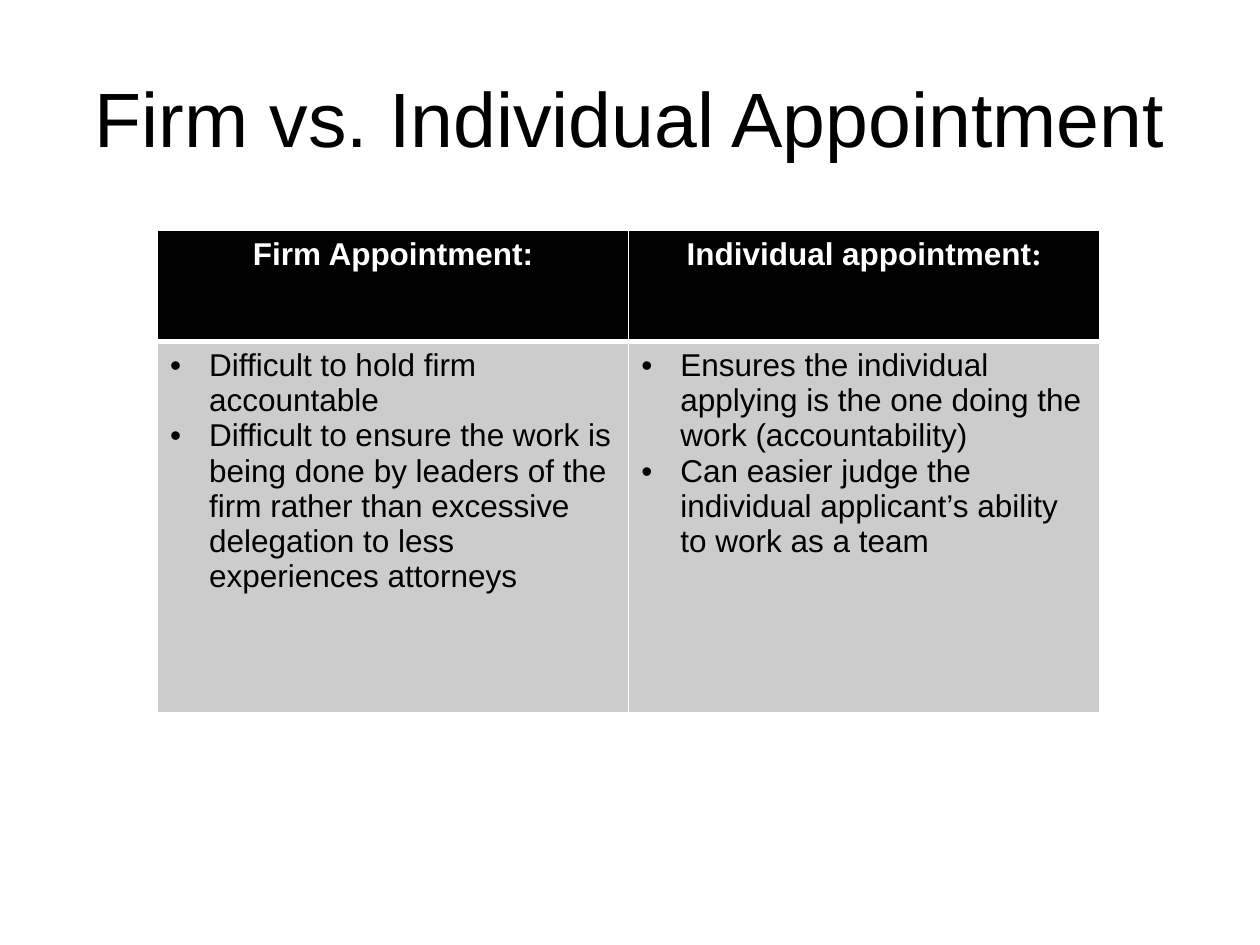
import pptx
import pptx.util
import pptx.dml.color
import pptx.enum.text
import pptx.oxml.ns
import lxml.etree

Inches = pptx.util.Inches
ALIGN = pptx.enum.text.PP_ALIGN
COLORS = {"ink": "000000", "paper": "FFFFFF", "body": "CCCCCC"}
TITLE_FORMAT = {"name": "Arial", "size": pptx.util.Pt(44), "bold": False}
HEADING_FORMAT = {"name": "Arial", "size": pptx.util.Pt(18), "bold": True}
COLON_FORMAT = {**HEADING_FORMAT, "name": "Times New Roman"}
POINT_FORMAT = {**HEADING_FORMAT, "bold": False}

APPOINTMENTS = [
    ([("Firm Appointment:", HEADING_FORMAT)],
     ["Difficult to hold firm accountable",
      "Difficult to ensure the work is being done by leaders of the firm "
      "rather than excessive delegation to less experiences attorneys"]),
    ([("Individual appointment", HEADING_FORMAT), (":", COLON_FORMAT)],
     ["Ensures the individual applying is the one doing the work (accountability)",
      "Can easier judge the individual applicant’s ability to work as a team"]),
]


def rgb(color):
    return pptx.dml.color.RGBColor.from_string(COLORS[color])


def add_words(paragraph, words, font_format, color):
    run = paragraph.add_run()
    run.text = words
    for attribute, value in font_format.items():
        setattr(run.font, attribute, value)
    run.font.color.rgb = rgb(color)


def add_part(parent, tag, **attributes):
    return lxml.etree.SubElement(parent, pptx.oxml.ns.qn(tag), attributes)


def style_cell(cell, fill, top, bottom):
    properties = cell._tc.get_or_add_tcPr()
    for side, points in {"L": 1, "R": 1, "T": top, "B": bottom}.items():
        border = add_part(properties, f"a:ln{side}", w=str(pptx.util.Pt(points)))
        add_part(add_part(border, "a:solidFill"), "a:srgbClr", val=COLORS["paper"])
    cell.fill.solid()
    cell.fill.fore_color.rgb = rgb(fill)


def add_bullet(paragraph):
    properties = paragraph._p.get_or_add_pPr()
    indent = Inches(0.31)
    properties.set("marL", str(indent))
    properties.set("indent", str(-indent))
    add_part(properties, "a:buFont", typeface="Arial")
    add_part(properties, "a:buChar", char="•")


def add_title(slide, left, top, width, height):
    frame = slide.shapes.add_textbox(left, top, width, height).text_frame
    frame.word_wrap = True
    frame.vertical_anchor = pptx.enum.text.MSO_ANCHOR.MIDDLE
    heading = frame.paragraphs[0]
    heading.alignment = ALIGN.CENTER
    add_words(heading, "Firm vs. Individual Appointment", TITLE_FORMAT, "ink")


def add_comparison(slide, left, top, width, height):
    comparison = slide.shapes.add_table(
        2, len(APPOINTMENTS), left, top, width, height).table
    comparison.horz_banding = False
    header_height = Inches(0.88)
    comparison.rows[0].height = header_height
    comparison.rows[1].height = height - header_height
    for column, (heading, points) in enumerate(APPOINTMENTS):
        header, body = comparison.cell(0, column), comparison.cell(1, column)
        style_cell(header, "ink", 1, 3)
        style_cell(body, "body", 3, 1)
        title = header.text_frame.paragraphs[0]
        title.alignment = ALIGN.CENTER
        for words, font_format in heading:
            add_words(title, words, font_format, "paper")
        for index, point in enumerate(points):
            frame = body.text_frame
            paragraph = frame.add_paragraph() if index else frame.paragraphs[0]
            add_bullet(paragraph)
            add_words(paragraph, point, POINT_FORMAT, "ink")


def main():
    deck = pptx.Presentation()
    deck.slide_width, deck.slide_height = Inches(10), Inches(7.5)
    slide = deck.slides.add_slide(deck.slide_layouts[6])
    add_title(slide, Inches(0.5), Inches(0.3), Inches(9), Inches(1.25))
    add_comparison(slide, Inches(1.25), Inches(1.83), Inches(7.48), Inches(3.83))
    deck.save("out.pptx")


if __name__ == "__main__":
    main()
